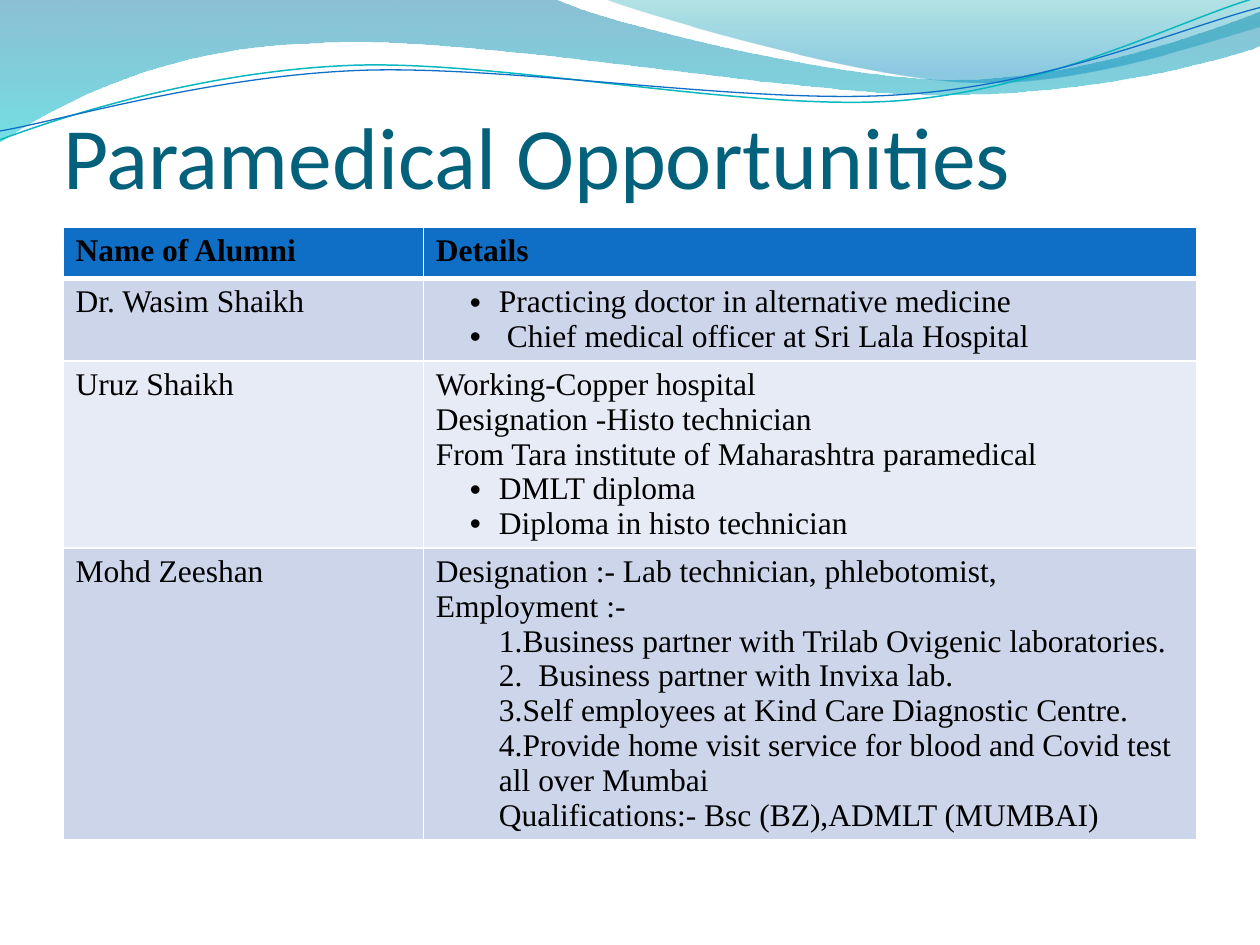
from lxml.etree import SubElement as Sub
from pptx import Presentation
from pptx.dml.color import RGBColor
from pptx.enum.text import MSO_ANCHOR as Anchor, PP_ALIGN as Align
from pptx.oxml.ns import qn
from pptx.util import Inches, Pt

WIDE, HIGH = 10, 7.5
SIDE = WIDE / 20
TOP = HIGH * 0.24
COLS = [2.86, 6.14]
ROWS = [0.41, 0.65, 1.48, 2.31]
HEAD, DARK, LIGHT = "0F6FC6", "CCD5EA", "E7EBF5"

# Each step holds one point (line) or three points (curve)
BANDS = [
    ((0, 0), [(4.4, -0.01), (4.76, 0.17, 6.64, 0.63, 7.58, 0.63),
              (8.53, 0.63, 9.58, 0.26, 10, 0.09), (10.01, 0.36),
              (9.83, 0.44, 8.7, 0.76, 7.46, 0.75),
              (6.22, 0.75, 3.82, 0.28, 2.57, 0.34),
              (1.29, 0.36, 0.46, 0.83, -0.01, 1.13), (0, 0)],
     [(0, "0074A1", 45), (1, "00C6CF", 55)]),
    ((4.79, -0.01), [(5.09, 0.11, 6.82, 0.62, 7.69, 0.65),
                     (8.56, 0.69, 9.61, 0.32, 10, 0.21), (10, 0),
                     (4.79, -0.01)],
     [(0, "00A1A9", 30), (0.8, "008BBF", 45)]),
]
WAVES = [
    ((0, 1.11), [(0.48, 0.93, 1.58, 0.57, 2.77, 0.52),
                 (3.95, 0.47, 5.93, 0.89, 7.13, 0.8),
                 (8.33, 0.71, 9.38, 0.15, 9.98, -0.02)], "0AB8BF", 0.85),
    ((0, 1.04), [(0.47, 0.96, 1.64, 0.61, 2.83, 0.56),
                 (4.03, 0.51, 5.97, 0.84, 7.17, 0.75),
                 (8.36, 0.67, 9.41, 0.21, 10, 0.06)], "0F6FC6", 0.75),
]

# Details: "*" marks a bullet, ">" an indented line
PEOPLE = [
    ("Dr. Wasim Shaikh", [
        "*Practicing doctor in alternative medicine",
        "* Chief medical officer at Sri Lala Hospital"]),
    ("Uruz Shaikh", [
        "Working-Copper hospital",
        "Designation -Histo technician",
        "From Tara institute of Maharashtra paramedical",
        "*DMLT diploma",
        "*Diploma in histo technician"]),
    ("Mohd Zeeshan", [
        "Designation :- Lab technician, phlebotomist,",
        "Employment :-",
        ">1.Business partner with Trilab Ovigenic laboratories.",
        ">2.  Business partner with Invixa lab.",
        ">3.Self employees at Kind Care Diagnostic Centre.",
        ">4.Provide home visit service for blood and Covid test all over Mumbai\n"
        "Qualifications:- Bsc (BZ),ADMLT (MUMBAI)"]),
]


def tint(code):
    return RGBColor.from_string(code)


def style(font, code, **attrs):
    for name, value in attrs.items():
        setattr(font, name, value)
    font.color.rgb = tint(code)


def add_path(slide, start, steps, close):
    """Lay every point down as a line, then join threes into curves."""
    pts = [start]
    for step in steps:
        pts += zip(step[::2], step[1::2])
    pts = [(Inches(x), Inches(y)) for x, y in pts]
    form = slide.shapes.build_freeform(*pts[0], scale=1.0)
    form.add_line_segments(pts[1:], close=close)
    shape = form.convert_to_shape()
    shape.shadow.inherit = False
    lines = iter(list(shape.element.iter(qn("a:lnTo"))))
    for step in steps:
        line = next(lines)
        if len(step) == 6:
            curve = line.makeelement(qn("a:cubicBezTo"))
            line.addprevious(curve)
            for part in (line, next(lines), next(lines)):
                curve.append(part[0])
                part.getparent().remove(part)
    return shape


def add_band(slide, start, steps, stops):
    shape = add_path(slide, start, steps, True)
    shape.line.fill.background()
    shape.fill.gradient()
    shape.fill.gradient_angle = 270
    for stop, (place, code, _) in zip(shape.fill.gradient_stops, stops):
        stop.position = place
        stop.color.rgb = tint(code)
    # Opacity of each colour stop
    nodes = shape.element.spPr.iter(qn("a:srgbClr"))
    for node, (_, _, alpha) in zip(nodes, stops):
        Sub(node, qn("a:alpha"), val=str(alpha * 1000))


def add_wave(slide, start, steps, code, width):
    shape = add_path(slide, start, steps, False)
    shape.fill.background()
    shape.line.color.rgb = tint(code)
    shape.line.width = Pt(width)


def set_title(slide, text):
    title = slide.shapes.title
    title.element.getparent().append(title.element)  # in front of the waves
    box = {"left": SIDE, "top": 0.39, "width": WIDE - 2 * SIDE, "height": 1.25}
    for name, value in box.items():
        setattr(title, name, Inches(value))
    frame = title.text_frame
    frame.text = text
    edges = {"margin_left": 0, "margin_top": Inches(0.05), "margin_right": 0,
             "margin_bottom": 0, "vertical_anchor": Anchor.BOTTOM}
    for name, value in edges.items():
        setattr(frame, name, value)
    para = frame.paragraphs[0]
    para.alignment = Align.LEFT
    style(para.runs[0].font, "04617B", name="Calibri", size=Pt(50))


def indent(para, mark):
    props = para._p.get_or_add_pPr()
    props.set("marL", str(Inches(0.5)))
    props.set("indent", str(Inches(-0.23) if mark == "*" else 0))
    if mark == "*":
        Sub(props, qn("a:buFont"), typeface="Arial")
        Sub(props, qn("a:buChar"), char="•")


def edge_cell(cell, row):
    """White borders, thicker between header and body."""
    props = cell._tc.get_or_add_tcPr()
    widths = {"L": 1, "R": 1, "T": 3 if row == 1 else 1,
              "B": 3 if row == 0 else 1}
    for side, width in widths.items():
        line = Sub(props, qn("a:ln" + side), w=str(Pt(width)))
        Sub(Sub(line, qn("a:solidFill")), qn("a:srgbClr"), val="FFFFFF")


def fill_cell(table, row, col, lines, code):
    cell = table.cell(row, col)
    edge_cell(cell, row)
    cell.fill.solid()
    cell.fill.fore_color.rgb = tint(code)
    frame = cell.text_frame
    for i, line in enumerate(lines):
        para = frame.add_paragraph() if i else frame.paragraphs[0]
        mark = line[0] if line[0] in "*>" else ""
        para.text = line[len(mark):]
        if mark:
            indent(para, mark)
        for run in para.runs:
            style(run.font, "000000", name="Times New Roman",
                  size=Pt(18), bold=row == 0)


def add_grid(slide):
    frame = slide.shapes.add_table(
        len(ROWS), len(COLS), Inches(SIDE), Inches(TOP),
        Inches(sum(COLS)), Inches(sum(ROWS)))
    table = frame.table
    for col, width in zip(table.columns, COLS):
        col.width = Inches(width)
    for row, height in zip(table.rows, ROWS):
        row.height = Inches(height)
    for col, text in enumerate(["Name of Alumni", "Details"]):
        fill_cell(table, 0, col, [text], HEAD)
    for row, (name, details) in enumerate(PEOPLE, 1):
        code = DARK if row % 2 else LIGHT
        fill_cell(table, row, 0, [name], code)
        fill_cell(table, row, 1, details, code)


def main():
    deck = Presentation()
    deck.slide_width, deck.slide_height = Inches(WIDE), Inches(HIGH)
    slide = deck.slides.add_slide(deck.slide_layouts[5])
    # Waves along the top edge
    for band in BANDS:
        add_band(slide, *band)
    for wave in WAVES:
        add_wave(slide, *wave)
    # Title and table
    set_title(slide, "Paramedical Opportunities")
    add_grid(slide)
    deck.save("out.pptx")


if __name__ == "__main__":
    main()
